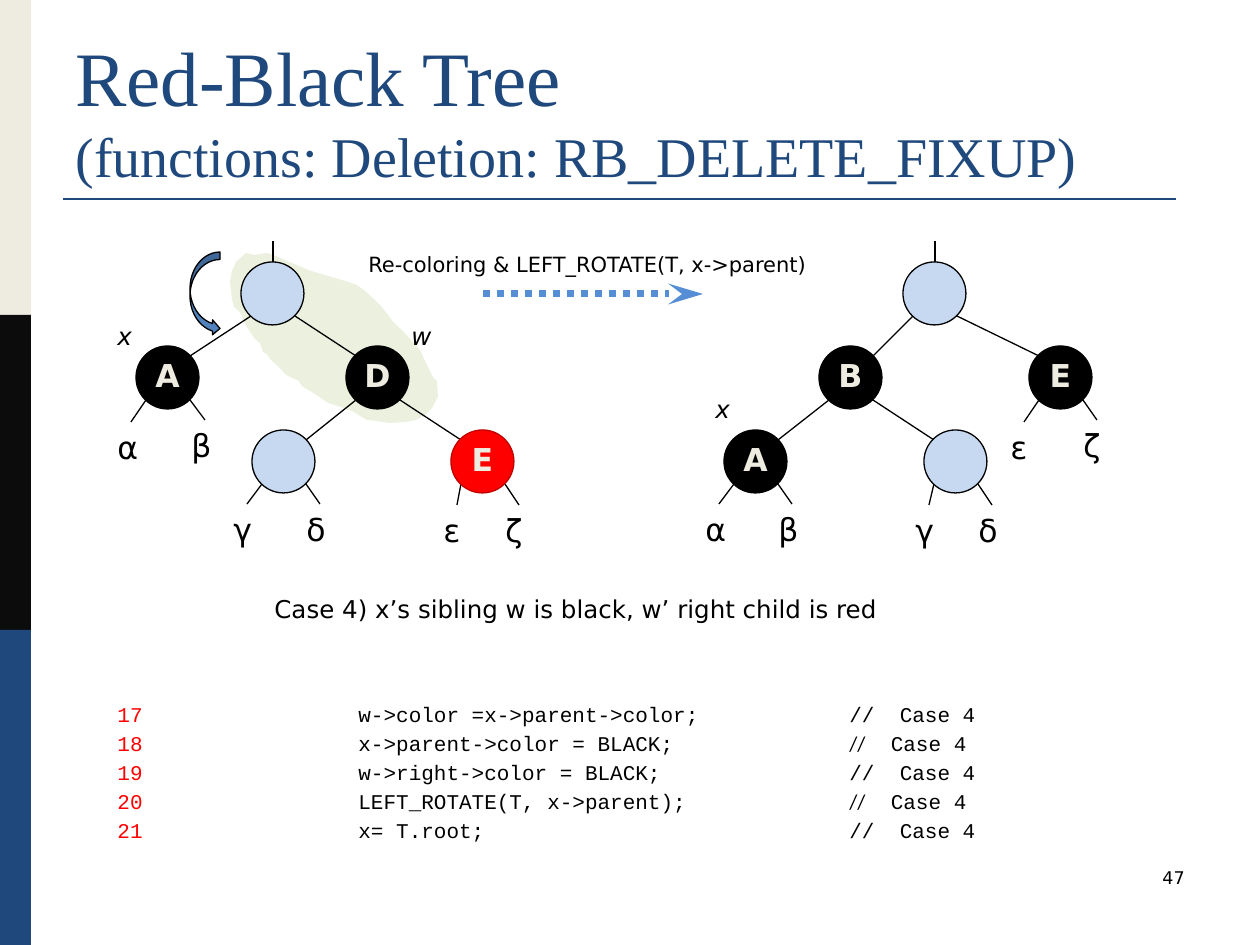
"""Build the slide on red-black tree deletion, case 4."""
import pptx
import pptx.dml.color
import pptx.enum.dml
import pptx.enum.shapes
import pptx.enum.text
import pptx.oxml
import pptx.oxml.ns
import pptx.util

RGB = pptx.dml.color.RGBColor
SHAPE = pptx.enum.shapes.MSO_SHAPE
ALIGN = pptx.enum.text.PP_ALIGN
ANCHOR = pptx.enum.text.MSO_ANCHOR
PX = 914400 // 126

BLACK, INK, RED = RGB(0, 0, 0), RGB(0x0C, 0x0C, 0x0C), RGB(0xFF, 0, 0)
DARK_RED, NAVY, CREAM = RGB(0xC0, 0, 0), RGB(0x1F, 0x49, 0x7D), RGB(0xEE, 0xEC, 0xE1)
PALE_BLUE, PALE_GREEN = RGB(0xC6, 0xD9, 0xF1), RGB(0xEB, 0xF1, 0xDE)
ARROW_BLUE, MID_BLUE = RGB(0x55, 0x8E, 0xD5), RGB(0x4F, 0x81, 0xBD)
SANS, SERIF, MONO, SLASH_FONT = "DejaVu Sans", "Times New Roman", "Courier New", "Calibri"

TITLE = [("Red-Black Tree", 44), ("(functions: Deletion: RB_DELETE_FIXUP)", 32)]
SIDE_BANDS = [CREAM, INK, NAVY]
NODE, RADIUS, REACH, STEM = 63, 32, 22, 21
TREES = [
    {
        "root": "B",
        "nodes": {
            "B": (273, 294, PALE_BLUE), "A": (168, 378, BLACK), "D": (378, 378, BLACK),
            "C": (284, 462, PALE_BLUE), "E": (483, 462, RED),
        },
        "edges": ["BA", "BD", "DC", "DE"],
        "leaves": [("A", "α", 131, 422), ("A", "β", 205, 420), ("C", "γ", 247, 504),
                   ("C", "δ", 320, 504), ("E", "ε", 457, 505), ("E", "ζ", 519, 505)],
        "pointers": [("x", 105, 315), ("w", 399, 315)],
    },
    {
        "root": "D",
        "nodes": {
            "D": (935, 294, PALE_BLUE), "B": (851, 378, BLACK), "E": (1061, 378, BLACK),
            "A": (756, 462, BLACK), "C": (956, 462, PALE_BLUE),
        },
        "edges": ["DB", "DE", "BA", "BC"],
        "leaves": [("E", "ε", 1024, 422), ("E", "ζ", 1097, 420), ("A", "α", 719, 504),
                   ("A", "β", 792, 504), ("C", "γ", 929, 505), ("C", "δ", 992, 505)],
        "pointers": [("x", 703, 388)],
    },
]
HIGHLIGHT = [
    (246, 253), (236, 262), (234, 267), (232, 271), (230, 282), (232, 299), (234, 307),
    (239, 311), (242, 316), (243, 321), (249, 330), (255, 339), (260, 343), (263, 352),
    (267, 354), (270, 359), (281, 369), (285, 374), (290, 377), (299, 381), (302, 386),
    (315, 394), (328, 403), (341, 407), (352, 411), (367, 420), (377, 421), (389, 423),
    (406, 422), (416, 420), (425, 415), (432, 408), (438, 397), (437, 381), (433, 377),
    (426, 363), (420, 350), (411, 340), (403, 331), (394, 323), (382, 307), (374, 299),
    (365, 291), (357, 285), (345, 281), (328, 276), (311, 271), (297, 265), (289, 262),
    (276, 256), (267, 253), (255, 255),
]
CODE = [
    ("17", "w->color =x->parent->color;", MONO),
    ("18", "x->parent->color = BLACK;", SLASH_FONT),
    ("19", "w->right->color = BLACK;", MONO),
    ("20", "LEFT_ROTATE(T, x->parent);", SLASH_FONT),
    ("21", "x= T.root;", MONO),
]
CODE_TABS = [241, 732]

deck = pptx.Presentation()
deck.slide_width, deck.slide_height = 1260 * PX, 945 * PX
slide = deck.slides.add_slide(deck.slide_layouts[6])


def write(paragraph, text, size=18, font=SANS, color=BLACK, bold=False, italic=False, align=None):
    run = paragraph.add_run()
    run.text = text
    run.font.size, run.font.name = pptx.util.Pt(size), font
    run.font.bold, run.font.italic = bold, italic
    run.font.color.rgb = color
    if align is not None:
        paragraph.alignment = align


def text_area(x, y, width, height, anchor=ANCHOR.TOP):
    frame = slide.shapes.add_textbox(x * PX, y * PX, width * PX, height * PX).text_frame
    frame.word_wrap = True
    frame.vertical_anchor = anchor
    return frame


def paint(shape, fill, outline=None):
    shape.shadow.inherit = False
    shape.fill.solid()
    shape.fill.fore_color.rgb = fill
    if outline is None:
        shape.line.fill.background()
    else:
        shape.line.color.rgb = outline
        shape.line.width = pptx.util.Pt(0.75)


def preset(kind, x, y, width, height, fill, outline=None):
    shape = slide.shapes.add_shape(kind, x * PX, y * PX, width * PX, height * PX)
    paint(shape, fill, outline)
    return shape


def connect(x1, y1, x2, y2, color=BLACK, width=0.75):
    link = slide.shapes.add_connector(
        pptx.enum.shapes.MSO_CONNECTOR.STRAIGHT, x1 * PX, y1 * PX, x2 * PX, y2 * PX)
    link.line.color.rgb = color
    link.line.width = pptx.util.Pt(width)
    link._element.spPr.append(pptx.oxml.parse_xml(
        "<a:effectLst %s/>" % pptx.oxml.ns.nsdecls("a")))
    return link


def draw_tree(tree):
    nodes = tree["nodes"]
    root_x, root_y, _ = nodes[tree["root"]]
    connect(root_x, root_y - RADIUS, root_x, root_y - RADIUS - STEM)
    for parent, child in tree["edges"]:
        (x1, y1, _), (x2, y2, _) = nodes[parent], nodes[child]
        reach = REACH if x2 > x1 else -REACH
        connect(x1 + reach, y1 + REACH, x2 - reach, y2 - REACH)
    for parent, letter, x, y in tree["leaves"]:
        node_x, node_y, _ = nodes[parent]
        connect(node_x + (REACH if x > node_x else -REACH), node_y + REACH, x, y)
        write(text_area(x - 26, y, 53, 50).paragraphs[0], letter)
    for letter, (x, y, fill) in nodes.items():
        node = preset(SHAPE.OVAL, x - RADIUS, y - RADIUS, NODE, NODE, fill,
                      DARK_RED if fill == RED else BLACK)
        if fill == PALE_BLUE:
            continue
        frame = node.text_frame
        frame.margin_left = frame.margin_right = frame.margin_top = 0
        frame.margin_bottom = 6 * PX
        frame.vertical_anchor = ANCHOR.MIDDLE
        write(frame.paragraphs[0], letter, color=CREAM, bold=True, align=ALIGN.CENTER)
    for letter, x, y in tree["pointers"]:
        write(text_area(x, y, 53, 43).paragraphs[0], letter, size=14, italic=True)


for band, color in enumerate(SIDE_BANDS):
    preset(SHAPE.RECTANGLE, 0, band * 315, 31, 315, color)
connect(63, 199, 1176, 199, NAVY, 1.5)

title = text_area(63, 38, 1134, 157, ANCHOR.BOTTOM).paragraphs[0]
for row, (words, size) in enumerate(TITLE):
    if row:
        title.add_line_break()
    write(title, words, size=size, font=SERIF, color=NAVY)

outline = slide.shapes.build_freeform(*HIGHLIGHT[0], scale=PX)
outline.add_line_segments(HIGHLIGHT[1:], close=True)
paint(outline.convert_to_shape(), PALE_GREEN)

for tree in TREES:
    draw_tree(tree)

step_arrow = connect(483, 294, 703, 294, ARROW_BLUE, 4)
step_arrow.line.dash_style = pptx.enum.dml.MSO_LINE.ROUND_DOT
step_arrow.line._get_or_add_ln().append(pptx.oxml.parse_xml(
    '<a:tailEnd type="stealth" len="lg" %s/>' % pptx.oxml.ns.nsdecls("a")))
preset(SHAPE.CURVED_RIGHT_ARROW, 190, 252, 30, 84, MID_BLUE, BLACK)

write(text_area(356, 245, 505, 38).paragraphs[0],
      "Re-coloring & LEFT_ROTATE(T, x->parent)", size=12)
write(text_area(262, 588, 650, 43).paragraphs[0],
      "Case 4) x’s sibling w is black, w’ right child is red", size=14)

listing = text_area(105, 692, 1092, 159)
for row, (number, statement, slash_font) in enumerate(CODE):
    line = listing.add_paragraph() if row else listing.paragraphs[0]
    line.line_spacing = 1.15
    stops = "".join('<a:tab pos="%d" algn="l"/>' % (stop * PX) for stop in CODE_TABS)
    line._p.get_or_add_pPr().append(pptx.oxml.parse_xml(
        "<a:tabLst %s>%s</a:tabLst>" % (pptx.oxml.ns.nsdecls("a"), stops)))
    write(line, number, size=12, font=MONO, color=RED)
    write(line, "\t" + statement + "\t", size=12, font=MONO)
    write(line, "//", size=12, font=slash_font)
    write(line, "  Case 4", size=12, font=MONO)

write(text_area(903, 861, 294, 63).paragraphs[0], "47", size=10, align=ALIGN.RIGHT)
deck.save("out.pptx")
